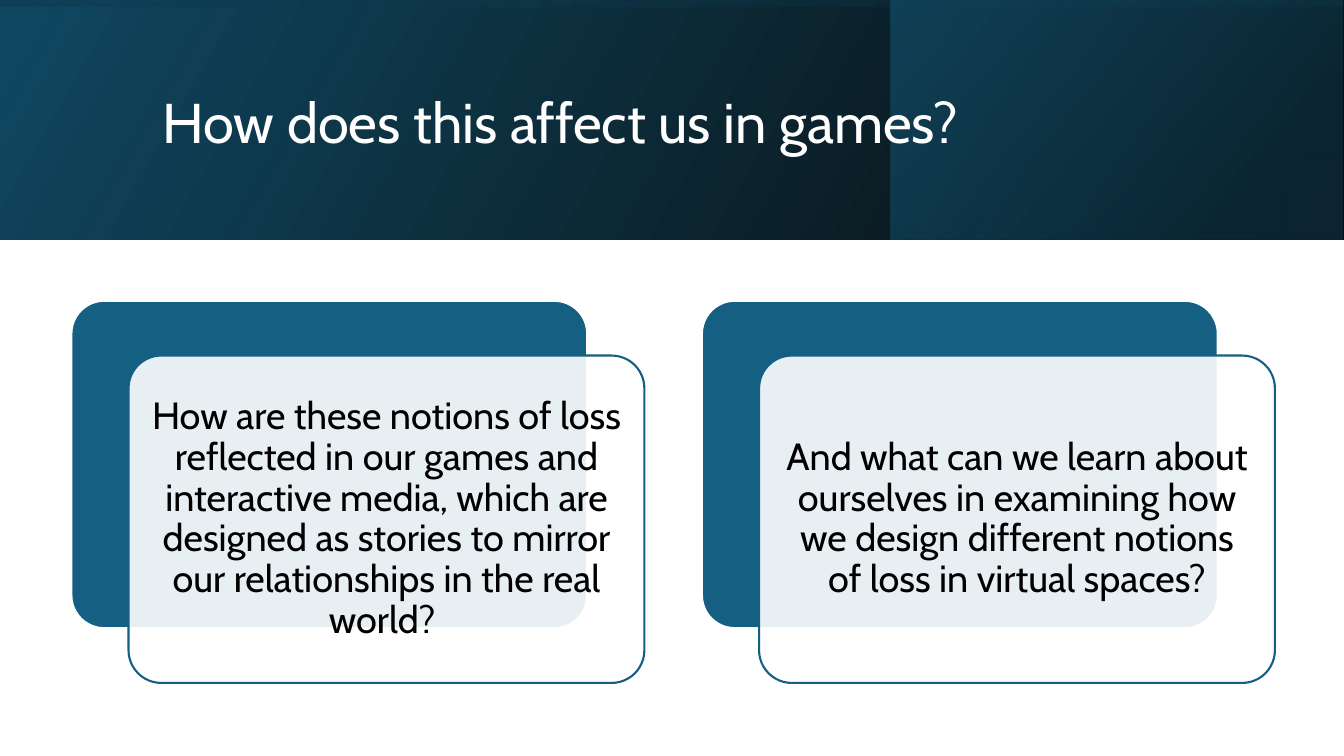
from lxml.etree import SubElement
from pptx import Presentation
from pptx.dml.color import RGBColor
from pptx.enum.shapes import MSO_SHAPE
from pptx.enum.text import MSO_ANCHOR, PP_ALIGN
from pptx.oxml.ns import qn
from pptx.util import Cm, Pt

WIDE, HIGH = 33.87, 19.05
FONT = "Cabin"
BLUE, WHITE, BLACK = "156082", "FFFFFF", "000000"
CARDS = [
    "How are these notions of loss reflected in our games and interactive media, "
    "which are designed as stories to mirror our relationships in the real world? ",
    "And what can we learn about ourselves in examining how we design different "
    "notions of loss in virtual spaces?",
]


def paint(color, value, alpha=100):
    """Set a colour from a hex string, with opacity in percent."""
    color.rgb = RGBColor.from_string(value)
    if alpha < 100:
        for node in color._xFill.iter(qn("a:srgbClr")):
            SubElement(node, qn("a:alpha")).set("val", str(alpha * 1000))


def fade(stop, place, value, alpha):
    """Set place, colour and opacity of one gradient stop."""
    stop.position = place / 100
    stop.color.rgb = RGBColor.from_string(value)
    node = stop._gs.find(qn("a:srgbClr"))
    SubElement(node, qn("a:alpha")).set("val", str(alpha * 1000))


def block(slide, kind, left, top, width, height):
    shape = slide.shapes.add_shape(kind, Cm(left), Cm(top), Cm(width), Cm(height))
    shape.shadow.inherit = False
    return shape


def veil(slide, box, stops, angle, turn=0):
    """Mirrored rectangle with a two-stop gradient."""
    shape = block(slide, MSO_SHAPE.RECTANGLE, *box)
    shape.rotation = turn
    shape._element.spPr.find(qn("a:xfrm")).set("flipH", "1")
    shape.line.fill.background()
    shape.fill.gradient()
    shape.fill.gradient_angle = 360 - angle
    for stop, data in zip(shape.fill.gradient_stops, stops):
        fade(stop, *data)


def write(frame, text, size, color, align):
    """Put one centred-in-height paragraph into a text frame."""
    frame.word_wrap = True
    frame.vertical_anchor = MSO_ANCHOR.MIDDLE
    para = frame.paragraphs[0]
    para.alignment = align
    para.line_spacing = 0.9
    run = para.add_run()
    run.text = text
    run.font.name = FONT
    run.font.size = Pt(size)
    paint(run.font.color, color)


def header(slide, left, top, width, height):
    # Three layered gradients
    side = 11.38
    veil(slide, (left, top, width, height),
         [(0, BLACK, 96), (100, "104862", 100)], 330)
    veil(slide, (left + 22.45, top, side, height),
         [(19, "0B3041", 68), (100, BLUE, 48)], 320)
    shift = (width - height) / 2
    veil(slide, (left + shift, top - shift, height, width),
         [(23, "104862", 16), (99, BLACK, 45)], 350, 270)

    # Title, brought in front of the gradients
    title = slide.shapes.title
    title.left, title.top = Cm(left + 3.84), Cm(top + 0.97)
    title.width, title.height = Cm(27), Cm(4.37)
    write(title.text_frame, "How does this affect us in games?", 40, WHITE, PP_ALIGN.LEFT)
    slide.shapes._spTree.append(title._element)


def card(slide, left, top, width, height, text):
    # Solid back panel, then a translucent front panel with the text
    panels = [(0, 0, BLUE, 100, WHITE), (1.44, 1.38, WHITE, 90, BLUE)]
    for right, down, fill, alpha, edge in panels:
        panel = block(slide, MSO_SHAPE.ROUNDED_RECTANGLE,
                      left + right, top + down, width, height)
        panel.adjustments[0] = 0.1
        panel.fill.solid()
        paint(panel.fill.fore_color, fill, alpha)
        paint(panel.line.color, edge)
        panel.line.width = Pt(1.5)
    frame = panel.text_frame
    frame.margin_left = frame.margin_right = Cm(0.28)
    frame.margin_top = frame.margin_bottom = Cm(0.28)
    write(frame, text, 27, BLACK, PP_ALIGN.CENTER)


def main():
    deck = Presentation()
    deck.slide_width, deck.slide_height = Cm(WIDE), Cm(HIGH)
    slide = deck.slides.add_slide(deck.slide_layouts[5])
    slide.background.fill.solid()
    paint(slide.background.fill.fore_color, WHITE)
    header(slide, 0, 0, WIDE, 6.03)
    for col, text in enumerate(CARDS):
        card(slide, 1.8 + 15.89 * col, 7.58, 13, 8.25, text)
    deck.save("out.pptx")


if __name__ == "__main__":
    main()
